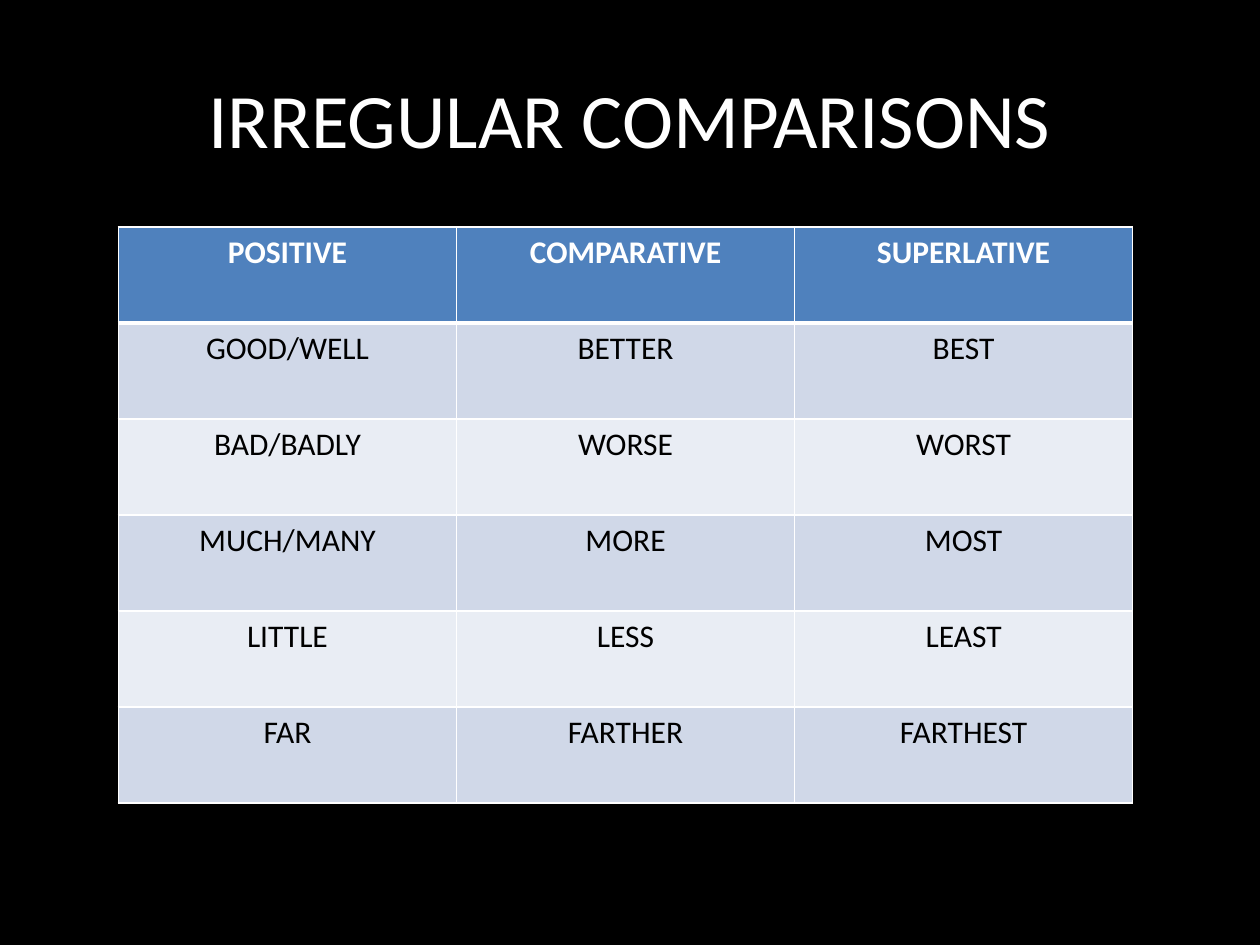
from pptx import Presentation
from pptx.dml.color import RGBColor
from pptx.enum.text import MSO_ANCHOR, PP_ALIGN
from pptx.oxml import parse_xml
from pptx.oxml.ns import nsdecls
from pptx.util import Inches, Pt

BLACK = RGBColor(0x00, 0x00, 0x00)
WHITE = RGBColor(0xFF, 0xFF, 0xFF)
BLUE = RGBColor(0x4F, 0x81, 0xBD)
BANDS = RGBColor(0xE9, 0xED, 0xF4), RGBColor(0xD0, 0xD8, 0xE8)

WIDE, HIGH = Inches(10), Inches(7.5)
TITLE = {"size": Pt(44), "bold": False, "color": WHITE}
HEAD = {"size": Pt(18), "bold": True, "color": WHITE}
BODY = {"size": Pt(18), "bold": False, "color": BLACK}

WORDS = [
    ("POSITIVE", "COMPARATIVE", "SUPERLATIVE"),
    ("GOOD/WELL", "BETTER", "BEST"),
    ("BAD/BADLY", "WORSE", "WORST"),
    ("MUCH/MANY", "MORE", "MOST"),
    ("LITTLE", "LESS", "LEAST"),
    ("FAR", "FARTHER", "FARTHEST"),
]


def place(left, top, width, height):
    return (int(WIDE * left), int(HIGH * top),
            int(WIDE * width), int(HIGH * height))


def write(frame, text, style):
    line = frame.paragraphs[0]
    line.alignment = PP_ALIGN.CENTER
    run = line.add_run()
    run.text = text
    run.font.name = "Calibri"
    for name, value in style.items():
        if name == "color":
            run.font.color.rgb = value
        else:
            setattr(run.font, name, value)


def add_title(slide, text):
    frame = slide.shapes.add_textbox(*place(0.05, 0.04, 0.9, 0.17)).text_frame
    frame.word_wrap = True
    frame.vertical_anchor = MSO_ANCHOR.MIDDLE
    write(frame, text, TITLE)


def rule(cell, row):
    widths = {"L": 1, "R": 1, "T": 3 if row == 1 else 1, "B": 1 if row else 3}
    for side, width in widths.items():
        cell._tc.get_or_add_tcPr().append(parse_xml(
            f'<a:ln{side} {nsdecls("a")} w="{Pt(width)}"><a:solidFill>'
            f'<a:srgbClr val="{WHITE}"/></a:solidFill></a:ln{side}>'))


def add_grid(slide, words):
    box = place(0.094, 0.24, 0.805, 0.61)
    grid = slide.shapes.add_table(len(words), len(words[0]), *box).table
    for row, texts in enumerate(words):
        for col, text in enumerate(texts):
            cell = grid.cell(row, col)
            rule(cell, row)
            cell.fill.solid()
            cell.fill.fore_color.rgb = BANDS[row % 2] if row else BLUE
            write(cell.text_frame, text, BODY if row else HEAD)


def main():
    deck = Presentation()
    deck.slide_width, deck.slide_height = WIDE, HIGH
    slide = deck.slides.add_slide(deck.slide_layouts[6])
    back = slide.background.fill
    back.solid()
    back.fore_color.rgb = BLACK
    add_title(slide, "IRREGULAR COMPARISONS")
    add_grid(slide, WORDS)
    deck.save("out.pptx")


if __name__ == "__main__":
    main()
